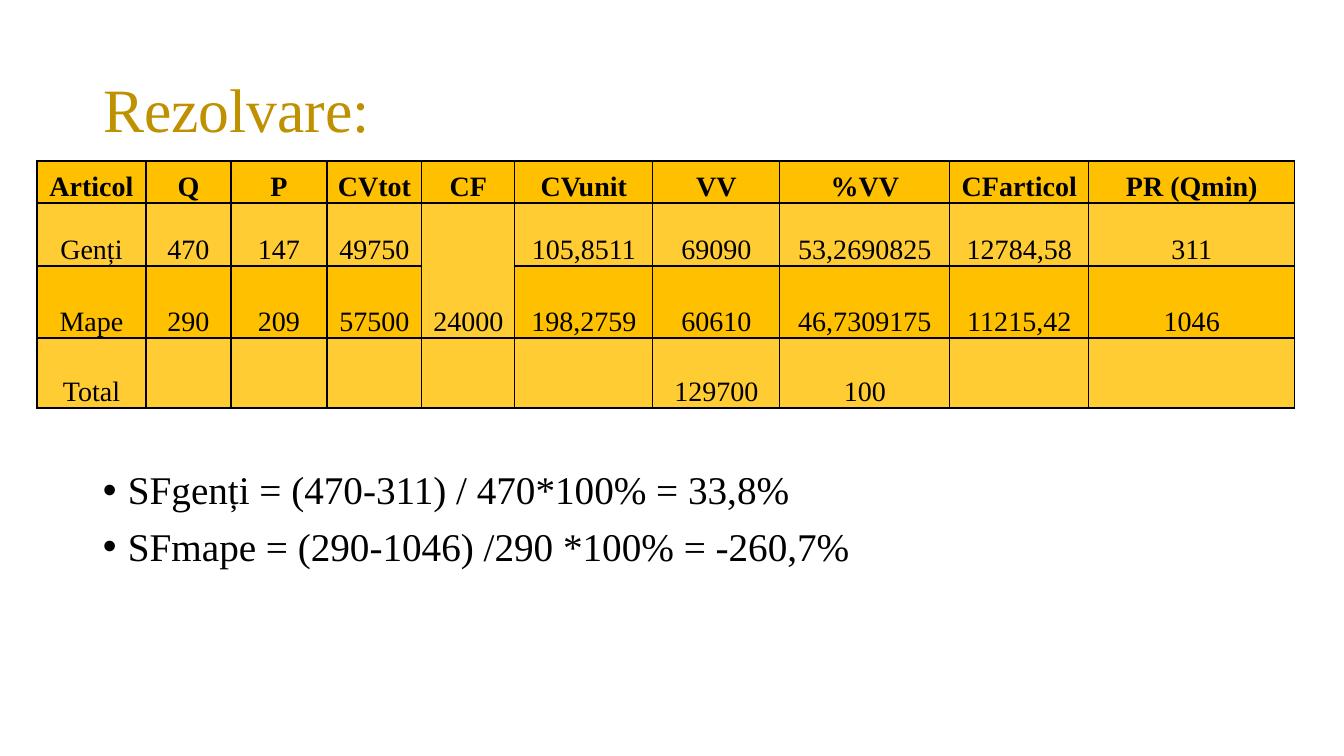
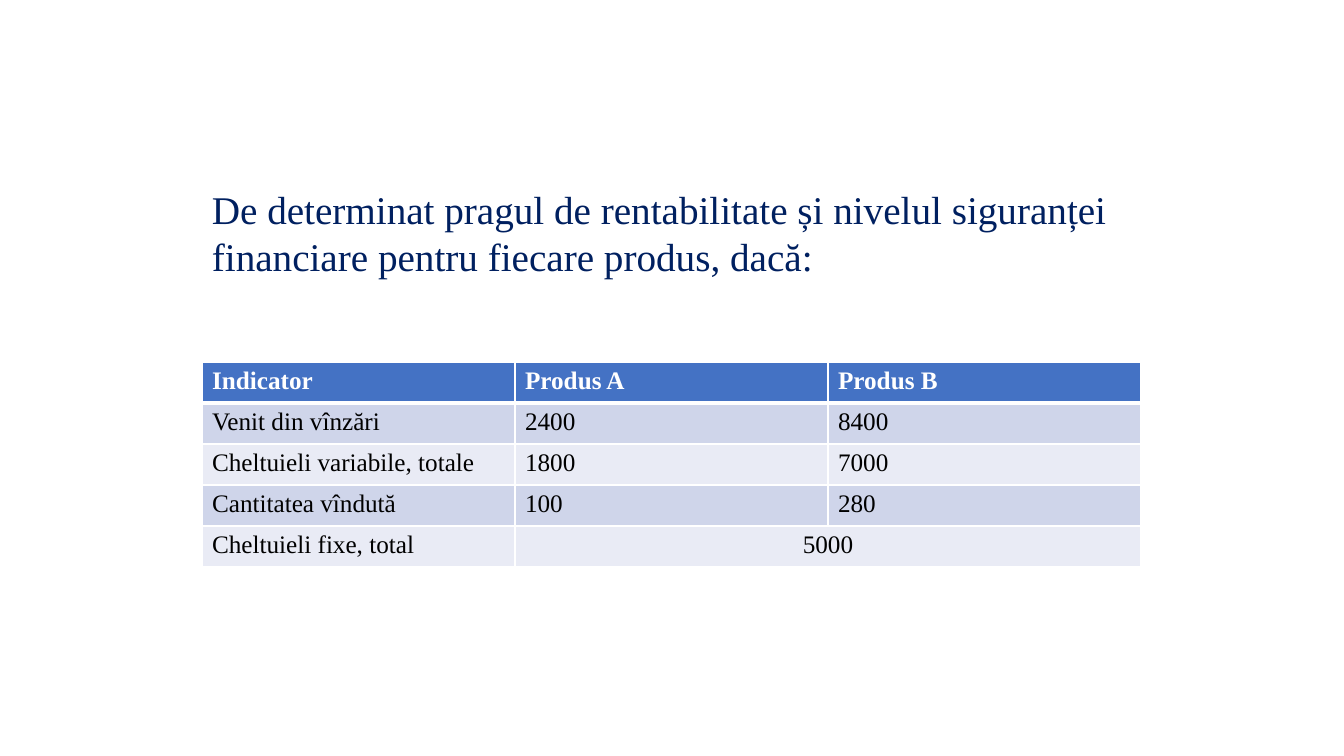
from collections import namedtuple

from lxml import etree
from pptx import Presentation
from pptx.dml.color import RGBColor
from pptx.enum.text import MSO_ANCHOR as Anchor, MSO_AUTO_SIZE as AutoSize, PP_ALIGN as Align
from pptx.oxml.ns import qn
from pptx.util import Emu, Pt

Box = namedtuple("Box", "left top width height")

PAGE_WIDTH, PAGE_HEIGHT = 1344, 756
SCALE = 12192000 / PAGE_WIDTH
FONT = "Times New Roman"
TITLE_ONLY, BLANK = 5, 6

BLACK, WHITE = "000000", "FFFFFF"
GOLD, DARK_GOLD, LIGHT_GOLD = "FFC000", "BF9000", "FFCC33"
BLUE, NAVY, PALE_BLUE, PALER_BLUE = "4472C4", "002060", "CFD5EA", "E9EBF5"

RESULT_COLUMNS = [109, 85, 96, 95, 93, 138, 127, 170, 139, 206]
RESULT_ROWS = [42, 63, 72, 70]
RESULTS = [
    ["Articol", "Q", "P", "CVtot", "CF", "CVunit", "VV", "%VV", "CFarticol", "PR (Qmin)"],
    ["Genți", "470", "147", "49750", "24000", "105,8511", "69090", "53,2690825", "12784,58", "311"],
    ["Mape", "290", "209", "57500", "", "198,2759", "60610", "46,7309175", "11215,42", "1046"],
    ["Total", "", "", "", "", "", "129700", "100", "", ""],
]
SAFETY_LEVELS = [
    "SFgenți = (470-311) / 470*100% = 33,8%",
    "SFmape = (290-1046) /290 *100% = -260,7%",
]
TASK = ("De determinat pragul de rentabilitate și nivelul siguranței "
        "financiare pentru fiecare produs, dacă:")
INDICATORS = [
    ["Indicator", "Produs A", "Produs B"],
    ["Venit din vînzări", "2400", "8400"],
    ["Cheltuieli variabile, totale", "1800", "7000"],
    ["Cantitatea vîndută", "100", "280"],
    ["Cheltuieli fixe, total", "5000", ""],
]

GOLD_STYLE = dict(
    fills=[GOLD, LIGHT_GOLD, GOLD, LIGHT_GOLD], border=BLACK, header_rule=1,
    header_color=BLACK, size=20,
    cell=dict(vertical_anchor=Anchor.BOTTOM, margin_left=Pt(5), margin_right=Pt(5),
              margin_top=0, margin_bottom=0),
    para=dict(alignment=Align.CENTER, line_spacing=1.15),
)
BLUE_STYLE = dict(
    fills=[BLUE, PALE_BLUE, PALER_BLUE, PALE_BLUE, PALER_BLUE], border=WHITE, header_rule=3,
    header_color=WHITE, size=18, cell={}, para={},
)


def px(length):
    return Emu(round(length * SCALE))


def rgb(color):
    return RGBColor.from_string(color)


def set_all(target, values):
    for name, value in values.items():
        setattr(target, name, value)


def place(shape, box):
    set_all(shape, {name: px(length) for name, length in box._asdict().items()})


def write(para, text, size, color, bold=False, **para_format):
    set_all(para, para_format)
    if text:
        span = para.add_run()
        span.text = text
        set_all(span.font, dict(name=FONT, size=Pt(size), bold=bold))
        span.font.color.rgb = rgb(color)


def add_bullet(para, indent):
    properties = para._p.get_or_add_pPr()
    properties.set("marL", str(px(indent)))
    properties.set("indent", str(px(-indent)))
    etree.SubElement(properties, qn("a:buFont"), typeface="Arial")
    etree.SubElement(properties, qn("a:buChar"), char="•")


def set_borders(cell, color, widths):
    """Draw the left, right, top and bottom edges, with widths in points."""
    properties = cell._tc.get_or_add_tcPr()
    for side, width in zip("LRTB", widths):
        line = etree.SubElement(properties, qn(f"a:ln{side}"), w=str(Pt(width)))
        fill = etree.SubElement(line, qn("a:solidFill"))
        etree.SubElement(fill, qn("a:srgbClr"), val=color)


def add_title(page, text, box):
    title = page.shapes.title
    place(title, box)
    set_all(title.text_frame, dict(vertical_anchor=Anchor.MIDDLE, word_wrap=True,
                                   auto_size=AutoSize.NONE))
    write(title.text_frame.paragraphs[0], text, 44, DARK_GOLD,
          alignment=Align.LEFT, line_spacing=0.9)


def add_text(page, lines, box, color, bulleted=False, **para_format):
    frame = page.shapes.add_textbox(*map(px, box)).text_frame
    frame.word_wrap = True
    for index, text in enumerate(lines):
        para = frame.add_paragraph() if index else frame.paragraphs[0]
        write(para, text, 28, color, **para_format)
        if bulleted:
            add_bullet(para, 25)


def add_grid(page, values, left, top, widths, heights, style):
    box = Box(left, top, sum(widths), sum(heights))
    table = page.shapes.add_table(len(heights), len(widths), *map(px, box)).table
    table.horz_banding = False
    for column, width in zip(table.columns, widths):
        column.width = px(width)
    for row, height in zip(table.rows, heights):
        row.height = px(height)

    for row, texts in enumerate(values):
        header = row == 0
        color = style["header_color"] if header else BLACK
        rule = style["header_rule"]
        edges = (1, 1, rule if row == 1 else 1, rule if header else 1)
        for column, text in enumerate(texts):
            cell = table.cell(row, column)
            set_all(cell, style["cell"])
            set_borders(cell, style["border"], edges)
            cell.fill.solid()
            cell.fill.fore_color.rgb = rgb(style["fills"][row])
            write(cell.text_frame.paragraphs[0], text, style["size"], color,
                  bold=header, **style["para"])
    return table


def build_solution(deck):
    page = deck.slides.add_slide(deck.slide_layouts[TITLE_ONLY])
    add_title(page, "Rezolvare:", Box(93, 40, 1159, 146))
    table = add_grid(page, RESULTS, 37, 161, RESULT_COLUMNS, RESULT_ROWS, GOLD_STYLE)
    table.cell(1, 4).merge(table.cell(2, 4))
    add_text(page, SAFETY_LEVELS, Box(93, 466, 1159, 129), BLACK, bulleted=True,
             line_spacing=0.9, space_before=Pt(10))


def build_task(deck):
    page = deck.slides.add_slide(deck.slide_layouts[BLANK])
    table = add_grid(page, INDICATORS, 202, 362, [313] * 3, [41] * 5, BLUE_STYLE)
    fixed_costs = table.cell(4, 1)
    fixed_costs.merge(table.cell(4, 2))
    fixed_costs.text_frame.paragraphs[0].alignment = Align.CENTER
    add_text(page, [TASK], Box(202, 180, 985, 159), NAVY, space_before=Pt(5.6))


def main():
    deck = Presentation()
    deck.slide_width, deck.slide_height = px(PAGE_WIDTH), px(PAGE_HEIGHT)
    build_solution(deck)
    build_task(deck)
    deck.save("out.pptx")


if __name__ == "__main__":
    main()
